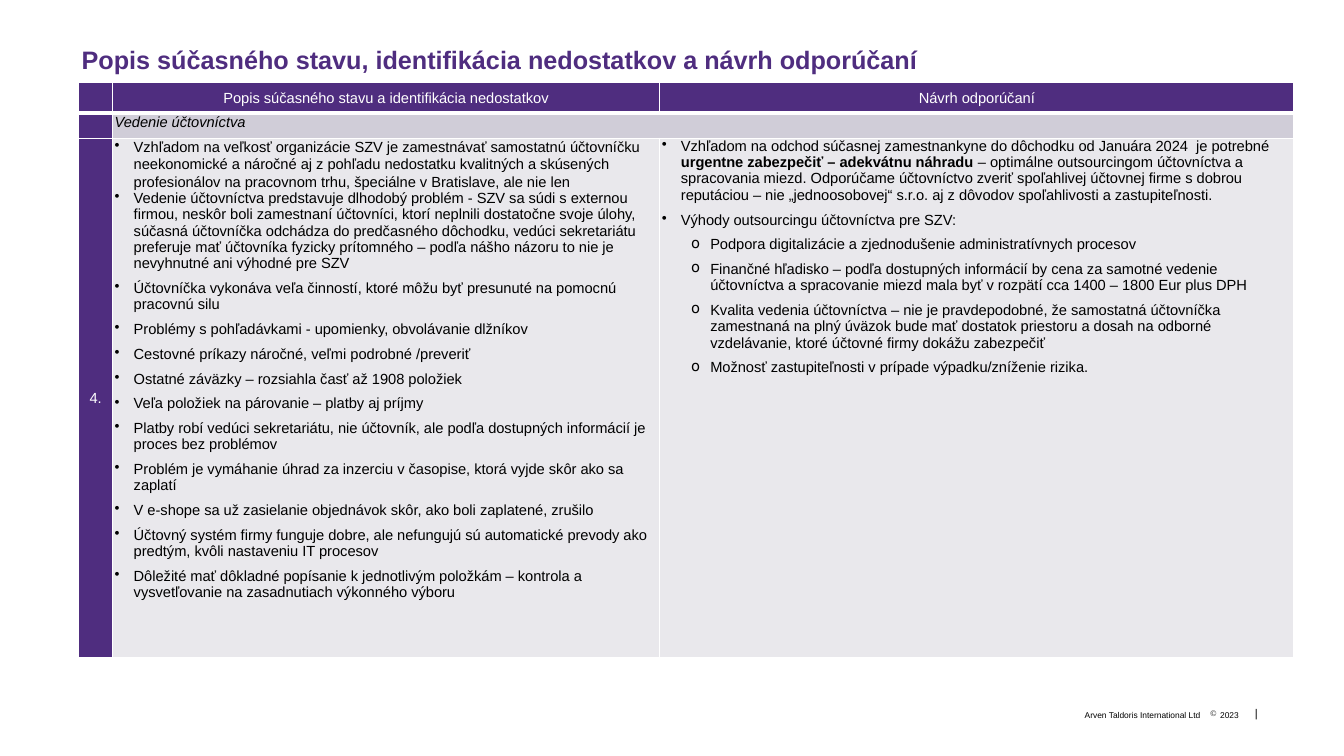
from dataclasses import dataclass

from lxml.etree import SubElement
from pptx import Presentation
from pptx.dml.color import RGBColor
from pptx.enum.text import MSO_ANCHOR, MSO_AUTO_SIZE, PP_ALIGN
from pptx.oxml import parse_xml
from pptx.oxml.ns import nsdecls, qn
from pptx.util import Cm, Pt


@dataclass(frozen=True)
class Theme:
    font: str = "Arial"
    purple: str = "4F2D7F"
    section: str = "D0CDD8"
    body: str = "E9E8EC"
    white: str = "FFFFFF"
    black: str = "000000"
    title_size: float = 18
    table_size: float = 10.5
    footer_size: float = 6
    divider_size: float = 8
    thin_border: float = 1
    header_border: float = 3


THEME = Theme()

TITLE = "Popis súčasného stavu, identifikácia nedostatkov a návrh odporúčaní"
HEADINGS = ["Popis súčasného stavu a identifikácia nedostatkov", "Návrh odporúčaní"]
SECTION = "Vedenie účtovníctva"
SECTION_NUMBER = "4."

FINDINGS = [
    "Vzhľadom na veľkosť organizácie SZV je zamestnávať samostatnú účtovníčku neekonomické a náročné aj z pohľadu nedostatku kvalitných a skúsených profesionálov na pracovnom trhu, špeciálne v Bratislave, ale nie len",
    "Vedenie účtovníctva predstavuje dlhodobý problém - SZV sa súdi s externou firmou, neskôr boli zamestnaní účtovníci, ktorí neplnili dostatočne svoje úlohy, súčasná účtovníčka odchádza do predčasného dôchodku, vedúci sekretariátu preferuje mať účtovníka fyzicky prítomného – podľa nášho názoru to nie je nevyhnutné ani výhodné pre SZV",
    "Účtovníčka vykonáva veľa činností, ktoré môžu byť presunuté na pomocnú pracovnú silu",
    "Problémy s pohľadávkami - upomienky, obvolávanie dlžníkov",
    "Cestovné príkazy náročné, veľmi podrobné /preveriť",
    "Ostatné záväzky – rozsiahla časť až 1908 položiek",
    "Veľa položiek na párovanie – platby aj príjmy",
    "Platby robí vedúci sekretariátu, nie účtovník, ale podľa dostupných informácií je proces bez problémov",
    "Problém je vymáhanie úhrad za inzerciu v časopise, ktorá vyjde skôr ako sa zaplatí",
    "V e-shope sa už zasielanie objednávok skôr, ako boli zaplatené, zrušilo",
    "Účtovný systém firmy funguje dobre, ale nefungujú sú automatické prevody ako predtým, kvôli nastaveniu IT procesov",
    "Dôležité mať dôkladné popísanie k jednotlivým položkám – kontrola a vysvetľovanie na zasadnutiach výkonného výboru",
]

URGENT_ADVICE = [
    ("Vzhľadom na odchod súčasnej zamestnankyne do dôchodku od Januára 2024  je potrebné ", False),
    ("urgentne zabezpečiť – adekvátnu náhradu", True),
    (" – optimálne outsourcingom účtovníctva a spracovania miezd. Odporúčame účtovníctvo zveriť spoľahlivej účtovnej firme s dobrou reputáciou – nie „jednoosobovej“ s.r.o. aj z dôvodov spoľahlivosti a zastupiteľnosti.", False),
]
BENEFITS_INTRO = "Výhody outsourcingu účtovníctva pre SZV:"
BENEFITS = [
    "Podpora digitalizácie a zjednodušenie administratívnych procesov",
    "Finančné hľadisko – podľa dostupných informácií by cena za samotné vedenie účtovníctva a spracovanie miezd mala byť v rozpätí cca 1400 – 1800 Eur plus DPH",
    "Kvalita vedenia účtovníctva – nie je pravdepodobné, že samostatná účtovníčka zamestnaná na plný úväzok bude mať dostatok priestoru a dosah na odborné vzdelávanie, ktoré účtovné firmy dokážu zabezpečiť",
    "Možnosť zastupiteľnosti v prípade výpadku/zníženie rizika.",
]


def apply(target, formats):
    for name, value in formats.items():
        setattr(target, name, value)


def write(paragraph, content, size, color, font=None, layout=None, bullet=None, left=0, hanging=0.48):
    if bullet:
        properties = paragraph._p.get_or_add_pPr()
        properties.set("marL", str(Cm(left)))
        properties.set("indent", str(-Cm(hanging)))
        SubElement(properties, qn("a:buChar")).set("char", bullet)
    apply(paragraph, layout or {})
    pieces = [(content, False)] if isinstance(content, str) else content
    for words, bold in pieces:
        run = paragraph.add_run()
        run.text = words
        apply(run.font, {"name": THEME.font, "size": Pt(size), "bold": bold, **(font or {})})
        run.font.color.rgb = RGBColor.from_string(color)


def add_text(slide, box, content, size, color, frame_formats, **text_formats):
    frame = slide.shapes.add_textbox(*map(Cm, box)).text_frame
    margins = dict.fromkeys(("margin_left", "margin_top", "margin_right", "margin_bottom"), 0)
    apply(frame, {**margins, **frame_formats})
    write(frame.paragraphs[0], content, size, color, **text_formats)


def add_title(slide, box):
    add_text(slide, box, TITLE, THEME.title_size, THEME.purple,
             {"word_wrap": True}, font={"bold": True},
             layout={"line_spacing": Pt(36)})


def style_cell(cell, fill, bottom_border):
    cell.fill.solid()
    cell.fill.fore_color.rgb = RGBColor.from_string(fill)
    apply(cell, {"margin_left": Cm(0.05), "margin_right": Cm(0.05),
                 "margin_top": 0, "margin_bottom": 0})
    properties = cell._tc.get_or_add_tcPr()
    for position, side in enumerate("LRTB"):
        width = bottom_border if side == "B" else THEME.thin_border
        properties.insert(position, parse_xml(
            f'<a:ln{side} {nsdecls("a")} w="{Pt(width)}"><a:solidFill>'
            f'<a:srgbClr val="{THEME.white}"/></a:solidFill></a:ln{side}>'))
    blank = cell.text_frame.paragraphs[0]._p
    SubElement(blank, qn("a:endParaRPr")).set("sz", str(int(THEME.table_size * 100)))


def write_list(cell, items):
    frame = cell.text_frame
    for index, item in enumerate(items):
        paragraph = frame.add_paragraph() if index else frame.paragraphs[0]
        write(paragraph, size=THEME.table_size, color=THEME.black, **item)


def add_findings_table(slide, box):
    left, top, width, height = box
    number_width, findings_width = 0.86, 13.79
    header_height, section_height = 0.76, 0.64
    widths = [number_width, findings_width, width - number_width - findings_width]
    heights = [header_height, section_height, height - header_height - section_height]
    table = slide.shapes.add_table(3, 3, *map(Cm, box)).table
    apply(table, {"first_row": False, "horz_banding": False})
    for column, column_width in zip(table.columns, widths):
        column.width = Cm(column_width)
    for row, row_height in zip(table.rows, heights):
        row.height = Cm(row_height)

    row_fills = [THEME.purple, THEME.section, THEME.body]
    for row_index, row_fill in enumerate(row_fills):
        for column_index in range(3):
            style_cell(table.cell(row_index, column_index),
                       row_fill if column_index else THEME.purple,
                       THEME.thin_border if row_index else THEME.header_border)

    centred = {"alignment": PP_ALIGN.CENTER, "line_spacing": 1.07}
    labels = [(table.cell(0, column), heading) for column, heading in enumerate(HEADINGS, 1)]
    labels.append((table.cell(2, 0), SECTION_NUMBER))
    for cell, label in labels:
        cell.vertical_anchor = MSO_ANCHOR.MIDDLE
        write(cell.text_frame.paragraphs[0], label, THEME.table_size, THEME.white, layout=centred)
    apply(table.cell(2, 0), {"margin_left": 0, "margin_right": 0})

    section = table.cell(1, 1)
    section.merge(table.cell(1, 2))
    write(section.text_frame.paragraphs[0], SECTION, THEME.table_size, THEME.black,
          font={"italic": True}, layout={"line_spacing": 1.07})

    spaced = {"space_after": Pt(6)}
    first_level = {"bullet": "•", "left": 0.48, "layout": spaced}
    second_level = {"bullet": "o", "left": 1.22, "layout": {"level": 1, **spaced}}
    opening = {**first_level, "layout": {"line_spacing": 1.07}}
    write_list(table.cell(2, 1), [
        {"content": finding, **(first_level if index else opening)}
        for index, finding in enumerate(FINDINGS)])
    write_list(table.cell(2, 2), [
        {"content": advice, **first_level} for advice in (URGENT_ADVICE, BENEFITS_INTRO)
    ] + [{"content": benefit, **second_level} for benefit in BENEFITS])


def add_footer(slide, box):
    left, top, width, height = box
    frame_formats = {"vertical_anchor": MSO_ANCHOR.BOTTOM, "word_wrap": False,
                     "auto_size": MSO_AUTO_SIZE.NONE}
    layout = {"alignment": PP_ALIGN.RIGHT, "space_after": Pt(6)}
    year = {"bullet": "©", "left": 0.25, "hanging": 0.25}
    parts = [
        ("Arven Taldoris International Ltd", 0, 8.38, THEME.footer_size, {}),
        ("2023", 8.61, 0.74, THEME.footer_size, year),
        ("|", width - 0.08, 0.08, THEME.divider_size, {}),
    ]
    for words, offset, part_width, size, bullet_formats in parts:
        add_text(slide, (left + offset, top, part_width, height), words, size,
                 THEME.black, frame_formats, layout=layout, **bullet_formats)


def main():
    presentation = Presentation()
    apply(presentation, {"slide_width": Cm(33.87), "slide_height": Cm(19.05)})
    slide = presentation.slides.add_slide(presentation.slide_layouts[6])
    add_footer(slide, (21.87, 17.73, 9.83, 0.41))
    add_findings_table(slide, (1.98, 2.08, 30.63, 14.5))
    add_title(slide, (2.06, 0.61, 26.01, 1.12))
    presentation.save("out.pptx")


if __name__ == "__main__":
    main()
